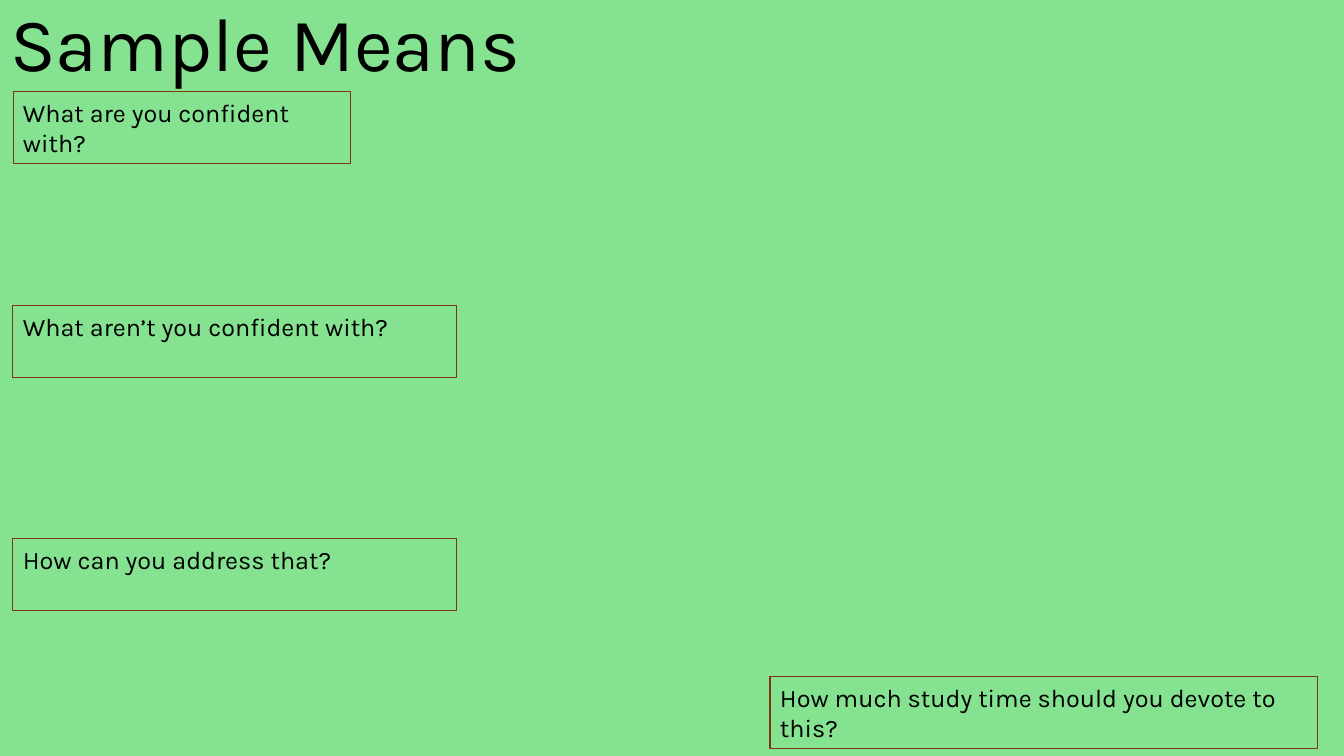
from pptx import Presentation
from pptx import util as u
from pptx.dml.color import RGBColor
from pptx.enum import shapes, text

GREEN = RGBColor(0x84, 0xE2, 0x91)
BROWN = RGBColor(0x80, 0x35, 0x0E)
BLACK = RGBColor(0, 0, 0)
FONT = "Karla"
EMU_PER_PX = 914400 / 100.8
PROMPT_HEIGHT = 72

PROMPTS = [
    ("What are you confident with?", 13, 92, 338),
    ("How much study time should you devote to this?", 770, 677, 548),
    ("What aren’t you confident with?", 13, 306, 444),
    ("How can you address that?", 13, 539, 444),
]


def px(length):
    return u.Emu(round(length * EMU_PER_PX))


def write(shape, wording, size, anchor, line_spacing=1.0):
    frame = shape.text_frame
    frame.word_wrap = True
    frame.auto_size = text.MSO_AUTO_SIZE.NONE
    frame.vertical_anchor = anchor
    para = frame.paragraphs[0]
    para.alignment = text.PP_ALIGN.LEFT
    para.line_spacing = line_spacing
    span = para.add_run()
    span.text = wording
    span.font.name = FONT
    span.font.size = u.Pt(size)
    span.font.color.rgb = BLACK


def add_title(page, wording):
    title = page.shapes.title
    title.left, title.top, title.width, title.height = map(px, (0, 0, 1308, 93))
    write(title, wording, size=54, anchor=text.MSO_ANCHOR.BOTTOM, line_spacing=0.9)


def add_prompt(page, wording, left, top, width):
    """Add an outlined question box."""
    box = page.shapes.add_shape(
        shapes.MSO_SHAPE.RECTANGLE, px(left), px(top), px(width), px(PROMPT_HEIGHT))
    box.shadow.inherit = False
    box.fill.background()
    box.line.color.rgb = BROWN
    box.line.width = u.Pt(0.75)
    write(box, wording, size=18, anchor=text.MSO_ANCHOR.TOP)


def main():
    deck = Presentation()
    deck.slide_width, deck.slide_height = px(1344), px(756)
    page = deck.slides.add_slide(deck.slide_layouts.get_by_name("Title Only"))
    page.background.fill.solid()
    page.background.fill.fore_color.rgb = GREEN
    add_title(page, "Sample Means")
    for prompt in PROMPTS:
        add_prompt(page, *prompt)
    deck.save("out.pptx")


if __name__ == "__main__":
    main()
